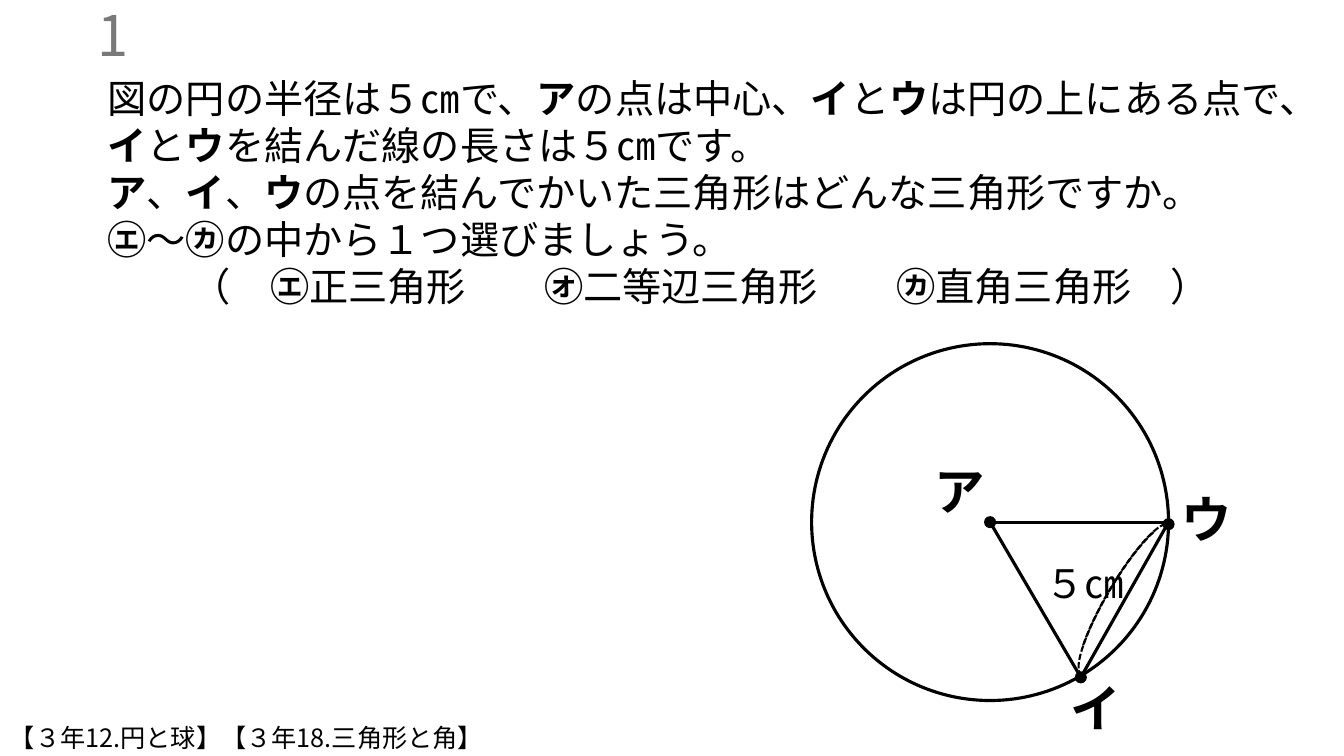
from dataclasses import dataclass

from lxml.etree import SubElement
from pptx import Presentation
from pptx.dml.color import RGBColor
from pptx.enum.dml import MSO_LINE_DASH_STYLE as Dash
from pptx.enum.shapes import MSO_CONNECTOR as Connector, MSO_SHAPE as Shape
from pptx.enum.text import MSO_ANCHOR as Anchor, MSO_AUTO_SIZE as AutoSize, PP_ALIGN as Align
from pptx.oxml.ns import qn
from pptx.util import Inches, Pt


@dataclass(frozen=True)
class Theme:
    font: str = "Noto Sans CJK JP"
    ink: RGBColor = RGBColor(0, 0, 0)
    muted: RGBColor = RGBColor(0x79, 0x79, 0x79)
    number_size: int = 40
    point_size: int = 36
    body_size: int = 28
    source_size: int = 18
    line_height: float = 1.2
    baseline_drop: float = 0.07
    outline: float = 2.25
    dashes: float = 1.5
    dot: float = 0.12


class Worksheet:
    """Draws the parts of a geometry question on one slide in a single theme."""

    def __init__(self, page, theme):
        self.page = page
        self.theme = theme

    def place(self, box, left, top, width, height, size):
        drop = self.theme.baseline_drop * size / 72
        box.left, box.top = Inches(left), Inches(top + drop)
        box.width, box.height = Inches(width), Inches(height)
        box.text_frame.word_wrap = True
        box.text_frame.auto_size = AutoSize.NONE

    def style(self, para, size, color, align=Align.LEFT):
        para.alignment = align
        para.line_spacing = Pt(size * self.theme.line_height)
        para.space_before = Pt(0)
        for span in para.runs:
            span.font.size = Pt(size)
            span.font.color.rgb = color
            span.font.name = self.theme.font
            east_asian = SubElement(span.font._element, qn("a:ea"))
            east_asian.set("typeface", self.theme.font)

    def number(self, text, *area):
        title = self.page.shapes.title
        self.place(title, *area, self.theme.number_size)
        title.text_frame.vertical_anchor = Anchor.MIDDLE
        title.text_frame.text = text
        para = title.text_frame.paragraphs[0]
        self.style(para, self.theme.number_size, self.theme.muted, Align.RIGHT)

    def text(self, lines, area, size):
        box = self.page.shapes.add_textbox(0, 0, 0, 0)
        self.place(box, *area, size)
        for index, (line, align) in enumerate(lines):
            frame = box.text_frame
            para = frame.add_paragraph() if index else frame.paragraphs[0]
            for position, part in enumerate(line.split("*")):
                if part:
                    span = para.add_run()
                    span.text = part
                    span.font.bold = position % 2 == 1
            self.style(para, size, self.theme.ink, align)

    def label(self, text, area, size):
        self.text([(text, Align.LEFT)], area, size)

    def circle(self, center, diameter, filled=False):
        left, top = (value - diameter / 2 for value in center)
        oval = self.page.shapes.add_shape(
            Shape.OVAL, Inches(left), Inches(top), Inches(diameter), Inches(diameter))
        oval.shadow.inherit = False
        if filled:
            oval.fill.solid()
            oval.fill.fore_color.rgb = self.theme.ink
            oval.line.fill.background()
        else:
            oval.fill.background()
            oval.line.color.rgb = self.theme.ink
            oval.line.width = Pt(self.theme.outline)

    def segment(self, start, end):
        line = self.page.shapes.add_connector(
            Connector.STRAIGHT, *(Inches(value) for value in (*start, *end)))
        line.line.color.rgb = self.theme.ink
        line.line.width = Pt(self.theme.outline)
        SubElement(line._element.spPr, qn("a:effectLst"))

    def dashed_arc(self, area, rotation, start_angle, flipped):
        arc = self.page.shapes.add_shape(Shape.ARC, *(Inches(value) for value in area))
        arc.shadow.inherit = False
        arc.adjustments[0] = start_angle * 0.6
        arc.adjustments[1] = 0
        arc.rotation = rotation
        if flipped:
            arc._element.spPr.find(qn("a:xfrm")).set("flipH", "1")
        arc.fill.background()
        arc.line.color.rgb = self.theme.ink
        arc.line.width = Pt(self.theme.dashes)
        arc.line.dash_style = Dash.SQUARE_DOT


def main():
    deck = Presentation()
    deck.slide_width, deck.slide_height = Inches(13.33), Inches(7.5)
    page = deck.slides.add_slide(deck.slide_layouts[5])
    theme = Theme()
    sheet = Worksheet(page, theme)

    question = [
        ("図の円の半径は５㎝で、*ア*の点は中心、*イ*と*ウ*は円の上にある点で、"
         "*イ*と*ウ*を結んだ線の長さは５㎝です。", Align.LEFT),
        ("*ア*、*イ*、*ウ*の点を結んでかいた三角形はどんな三角形ですか。", Align.LEFT),
        ("*㋓*～*㋕*の中から１つ選びましょう。", Align.LEFT),
        ("（　*㋓*正三角形　　*㋔*二等辺三角形　　*㋕*直角三角形　）", Align.CENTER),
    ]
    sheet.text(question, (0.97, 0.66, 11.96, 2.46), theme.body_size)
    sheet.number("1", -1.63, 0.1, 3, 0.4)

    center, lower, right = (9.82, 5.18), (10.72, 6.72), (11.59, 5.18)
    sheet.circle(center, 3.54)
    for start, end in ((lower, center), (center, right), (right, lower)):
        sheet.segment(start, end)
    sheet.dashed_arc((10.3, 5.76, 1.73, 0.37), 300.5, 192.25, False)
    sheet.dashed_arc((10.3, 5.77, 1.72, 0.36), 300.5, 187.78, True)
    sheet.label("５㎝", (10.27, 5.47, 1.18, 0.57), theme.body_size)

    for name, left, top in (("ア", 9.17, 4.48), ("ウ", 11.62, 4.76), ("イ", 10.52, 6.63)):
        sheet.label(f"*{name}*", (left, top, 0.64, 0.71), theme.point_size)
    sheet.label("【３年12.円と球】【３年18.三角形と角】", (0, 7.1, 7.49, 0.4), theme.source_size)
    for point in (center, lower, (11.59, 5.2)):
        sheet.circle(point, theme.dot, filled=True)

    deck.save("out.pptx")


if __name__ == "__main__":
    main()
